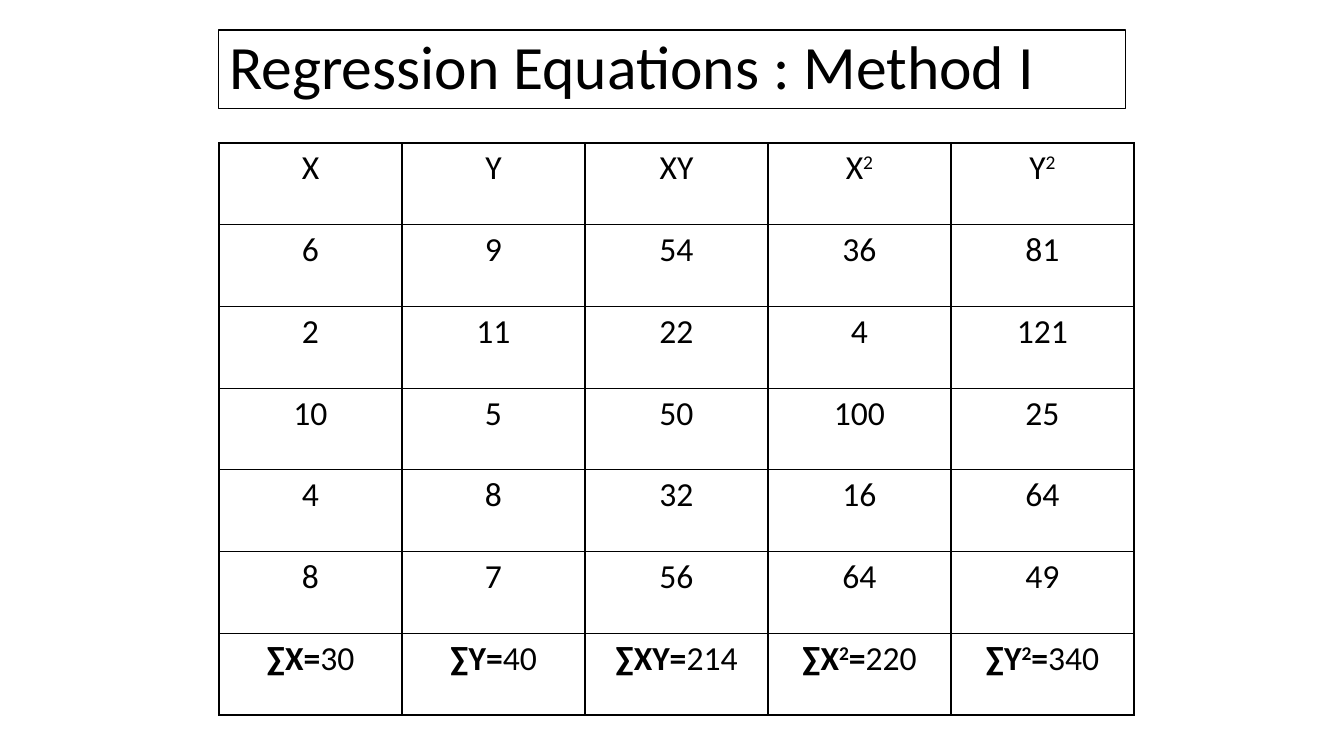
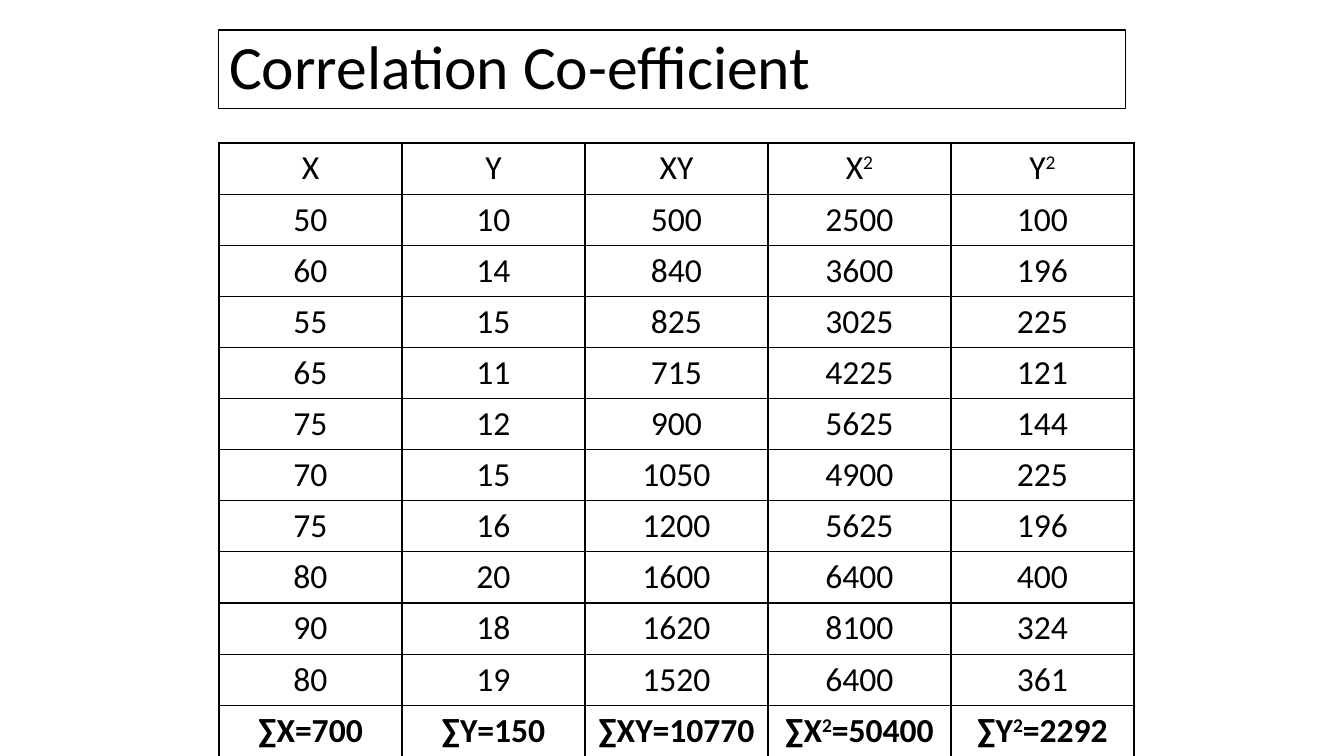
import pptx
import pptx.dml.color
import pptx.enum.text
import pptx.util
from pptx.oxml import parse_xml
from pptx.oxml.ns import nsdecls

EMU_PER_PX = 914400 / 100.8
FONT = "Calibri"
COLORS = {"ink": "000000", "paper": "FFFFFF"}

TITLE_BOX = (219, 30, 907, 79)
HEADINGS = ["X", "Y", "XY", "X²", "Y²"]

REGRESSION_ROWS = [
    [6, 9, 54, 36, 81],
    [2, 11, 22, 4, 121],
    [10, 5, 50, 100, 25],
    [4, 8, 32, 16, 64],
    [8, 7, 56, 64, 49],
]
REGRESSION_TOTALS = [30, 40, 214, 220, 340]

CORRELATION_ROWS = [
    [50, 10, 500, 2500, 100],
    [60, 14, 840, 3600, 196],
    [55, 15, 825, 3025, 225],
    [65, 11, 715, 4225, 121],
    [75, 12, 900, 5625, 144],
    [70, 15, 1050, 4900, 225],
    [75, 16, 1200, 5625, 196],
    [80, 20, 1600, 6400, 400],
    [90, 18, 1620, 8100, 324],
    [80, 19, 1520, 6400, 361],
]
CORRELATION_TOTALS = [700, 150, 10770, 50400, 2292]


def px(length):
    return pptx.util.Emu(round(length * EMU_PER_PX))


def color(name):
    return pptx.dml.color.RGBColor.from_string(COLORS[name])


def style_paragraph(paragraph, size, alignment):
    paragraph.alignment = alignment
    paragraph.font.name = FONT
    paragraph.font.size = pptx.util.Pt(size)
    paragraph.font.color.rgb = color("ink")


def add_text(paragraph, text, bold=False):
    """Add runs, raising each ² as a superscript 2."""
    base, square, rest = text.partition("²")
    for part, raised in ((base, False), (square and "2", True), (rest, False)):
        if part:
            run = paragraph.add_run()
            run.text = part
            run.font.bold = bold
            if raised:
                run.font._element.set("baseline", "30000")


def add_title(slide, box, text):
    title = slide.shapes.title
    title.left, title.top, title.width, title.height = map(px, box)
    title.line.color.rgb = color("ink")
    title.line.width = pptx.util.Pt(0.75)
    frame = title.text_frame
    frame.text = text
    frame.word_wrap = True
    frame.auto_size = pptx.enum.text.MSO_AUTO_SIZE.NONE
    frame.vertical_anchor = pptx.enum.text.MSO_ANCHOR.MIDDLE
    paragraph = frame.paragraphs[0]
    paragraph.line_spacing = 0.9
    style_paragraph(paragraph, 44, pptx.enum.text.PP_ALIGN.LEFT)


def style_cell(cell):
    # Borders come before the fill in the cell properties
    properties = cell._tc.get_or_add_tcPr()
    for side in "LRTB":
        properties.append(parse_xml(
            f'<a:ln{side} {nsdecls("a")} w="12700"><a:solidFill>'
            f'<a:srgbClr val="{COLORS["ink"]}"/></a:solidFill></a:ln{side}>'))
    cell.fill.solid()
    cell.fill.fore_color.rgb = color("paper")


def add_sums_table(slide, box, rows, totals, bold_totals):
    grid = [HEADINGS, *rows, totals]
    frame = slide.shapes.add_table(len(grid), len(HEADINGS), *map(px, box))
    table = frame.table
    table.first_row = table.horz_banding = False
    for row_index, values in enumerate(grid):
        for column_index, value in enumerate(values):
            cell = table.cell(row_index, column_index)
            style_cell(cell)
            paragraph = cell.text_frame.paragraphs[0]
            style_paragraph(paragraph, 24, pptx.enum.text.PP_ALIGN.CENTER)
            is_total = row_index == len(grid) - 1
            if is_total:
                add_text(paragraph, f"∑{HEADINGS[column_index]}=", bold=True)
            add_text(paragraph, str(value), bold=is_total and bold_totals)


def add_sums_slide(presentation, title, table_height, rows, totals, bold_totals):
    slide = presentation.slides.add_slide(presentation.slide_layouts[5])
    add_title(slide, TITLE_BOX, title)
    add_sums_table(slide, (219, 143, 915, table_height), rows, totals, bold_totals)


def main():
    presentation = pptx.Presentation()
    presentation.slide_width = px(1344)
    presentation.slide_height = px(756)
    add_sums_slide(presentation, "Regression Equations : Method I", 572,
                   REGRESSION_ROWS, REGRESSION_TOTALS, bold_totals=False)
    add_sums_slide(presentation, "Correlation Co-efficient", 605,
                   CORRELATION_ROWS, CORRELATION_TOTALS, bold_totals=True)
    presentation.save("out.pptx")


if __name__ == "__main__":
    main()
